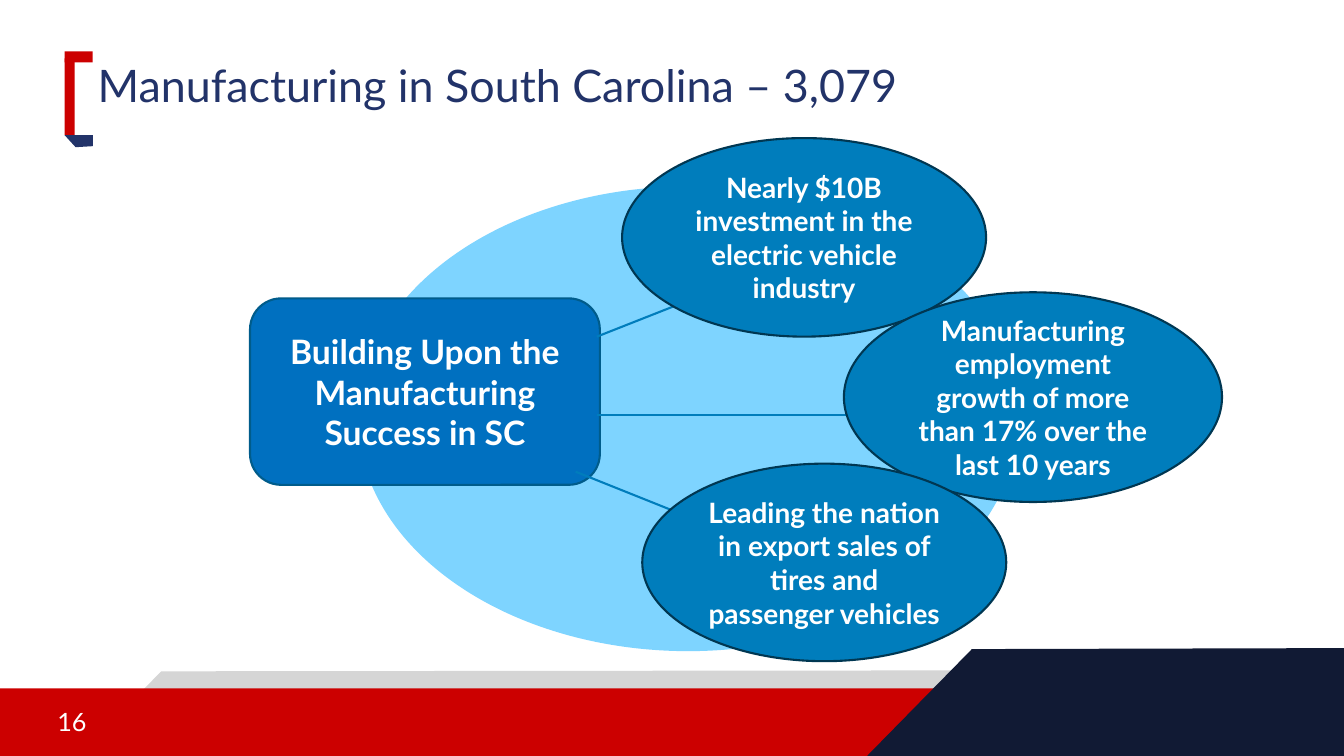
from pptx import Presentation
from pptx.dml.color import RGBColor
from pptx.enum.shapes import MSO_CONNECTOR, MSO_SHAPE
from pptx.enum.text import MSO_ANCHOR, PP_ALIGN
from pptx.oxml.ns import qn
from pptx.util import Inches, Pt
from lxml.etree import SubElement

COLORS = {
    "white": "FFFFFF", "gray": "D5D5D5", "red": "CC0000", "night": "111A34",
    "navy": "223369", "sky": "7ED4FF", "hub": "0070C0", "hub_edge": "005C8B",
    "fact": "007DBC", "fact_edge": "003752",
}


def rgb(name):
    return RGBColor.from_string(COLORS[name])


def write(frame, text, size=20, color="white", bold=False,
          align=PP_ALIGN.CENTER, anchor=MSO_ANCHOR.MIDDLE, spacing=None):
    frame.word_wrap = True
    frame.vertical_anchor = anchor
    paragraph = frame.paragraphs[0]
    paragraph.alignment = align
    if spacing:
        paragraph.line_spacing = spacing
    run = paragraph.add_run()
    run.text = text
    run.font.name = "Lato"
    run.font.size = Pt(size)
    run.font.bold = bold
    run.font.color.rgb = rgb(color)


class SlideBuilder:
    line_width = Pt(1.5)

    def __init__(self, slide):
        self.slide = slide
        self.shapes = slide.shapes

    def paint(self, shape, fill, edge=None):
        shape.shadow.inherit = False
        shape.fill.solid()
        shape.fill.fore_color.rgb = rgb(fill)
        if edge:
            shape.line.color.rgb = rgb(edge)
            shape.line.width = self.line_width
        else:
            shape.line.fill.background()
        return shape

    def shape(self, kind, box, fill, edge=None):
        return self.paint(self.shapes.add_shape(kind, *map(Inches, box)), fill, edge)

    def outline(self, points, fill):
        corners = [(Inches(x), Inches(y)) for x, y in points]
        builder = self.shapes.build_freeform(*corners[0], scale=1.0)
        builder.add_line_segments(corners[1:], close=True)
        return self.paint(builder.convert_to_shape(), fill)

    def text(self, box, text, **style):
        label = self.shapes.add_textbox(*map(Inches, box))
        write(label.text_frame, text, align=PP_ALIGN.LEFT, **style)

    def arrow(self, start, end, color):
        link = self.shapes.add_connector(
            MSO_CONNECTOR.STRAIGHT, *map(Inches, start + end))
        link.line.color.rgb = rgb(color)
        link.line.width = self.line_width
        properties = link._element.spPr
        SubElement(properties.find(qn("a:ln")), qn("a:tailEnd"), type="triangle")
        SubElement(properties, qn("a:effectLst"))


def main():
    deck = Presentation()
    deck.slide_width, deck.slide_height = Inches(13.33), Inches(7.5)
    page = SlideBuilder(deck.slides.add_slide(deck.slide_layouts[6]))

    # Footer bands and page number
    page.outline([(1.6, 6.66), (10.2, 6.65), (10.2, 7.14), (1.13, 7.14)], "gray")
    page.shape(MSO_SHAPE.RECTANGLE, (0, 6.83, 13.33, 0.67), "red")
    page.outline([(9.64, 6.44), (13.33, 6.43), (13.33, 7.5), (8.6, 7.5)], "night")
    page.text((0.47, 6.96, 3, 0.4), "16", size=18)

    # Bracket beside the title
    page.outline([(0.64, 0.58), (0.74, 0.58), (0.74, 1.36), (0.64, 1.34)], "red")
    page.shape(MSO_SHAPE.RECTANGLE, (0.64, 0.51, 0.28, 0.11), "red")
    page.outline([(0.92, 1.34), (0.92, 1.45), (0.75, 1.46), (0.64, 1.34)], "navy")

    # Title
    page.text((0.87, 0.58, 12.22, 1.09), "Manufacturing in South Carolina – 3,079",
              size=32, color="navy", anchor=MSO_ANCHOR.TOP, spacing=0.9)

    # Backdrop and central theme
    page.shape(MSO_SHAPE.OVAL, (3.55, 1.85, 6.55, 4.61), "sky")
    theme = page.shape(MSO_SHAPE.ROUNDED_RECTANGLE, (2.48, 2.96, 3.47, 1.85),
                       "hub", "hub_edge")
    write(theme.text_frame, "Building Upon the Manufacturing Success in SC",
          size=24, bold=True)

    # Arrows from the theme, tucked under the facts
    for start, end in [((5.92, 4.12), (8.6, 4.12)),
                       ((5.71, 4.68), (7.26, 5.3)),
                       ((5.92, 3.34), (7.39, 2.76))]:
        page.arrow(start, end, "fact")

    # Supporting facts
    facts = [
        ((6.17, 1.37, 3.61, 1.97),
         "Nearly $10B investment in the electric vehicle industry"),
        ((8.37, 2.9, 3.75, 2.08),
         "Manufacturing employment growth of more than 17% over the last 10 years"),
        ((6.37, 4.6, 3.61, 1.96),
         "Leading the nation in export sales of tires and passenger vehicles"),
    ]
    for box, sentence in facts:
        fact = page.shape(MSO_SHAPE.OVAL, box, "fact", "fact_edge")
        write(fact.text_frame, sentence, bold=True)

    deck.save("out.pptx")


if __name__ == "__main__":
    main()
